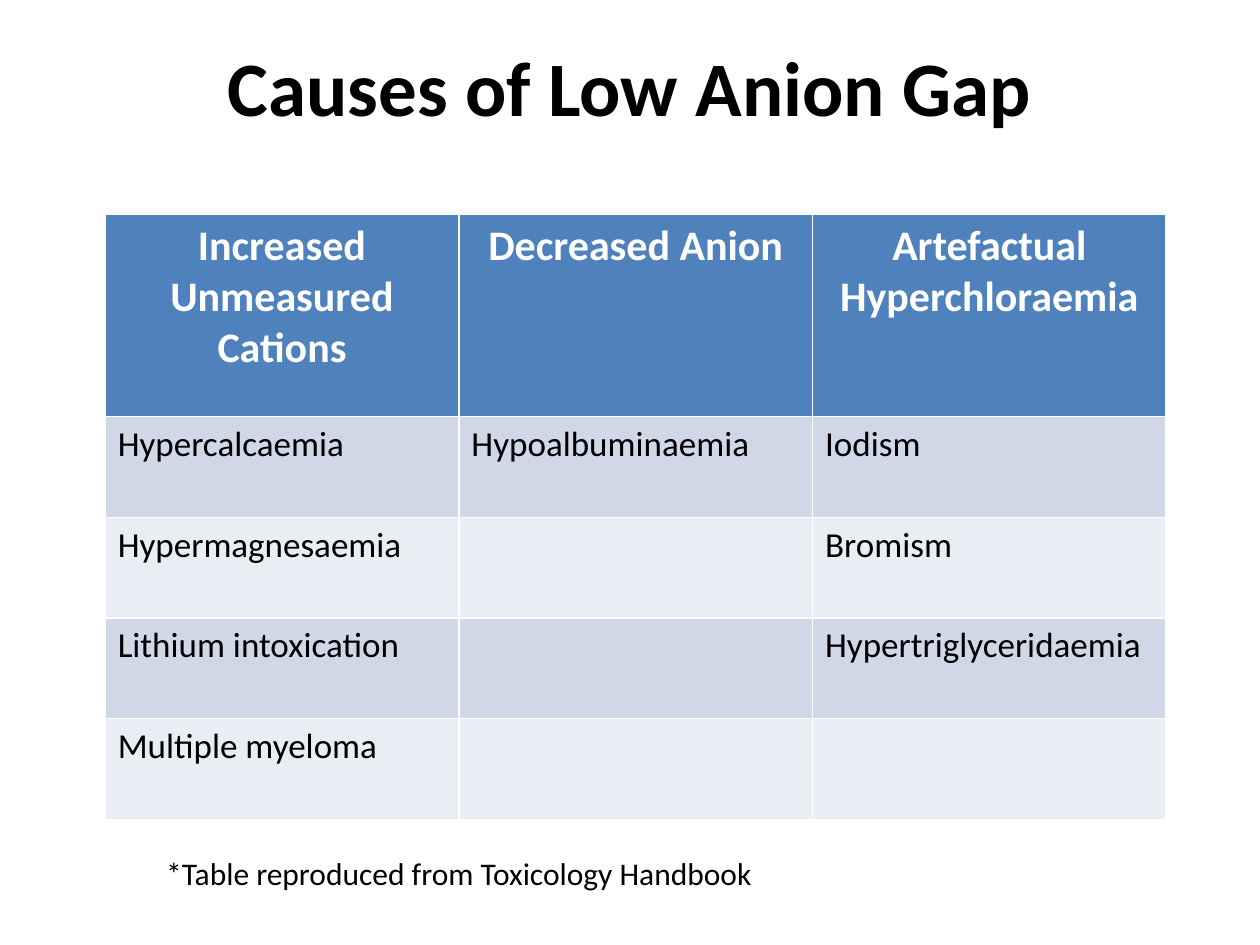
from dataclasses import dataclass

from pptx import Presentation
from pptx.dml.color import RGBColor
from pptx.enum import text as t
from pptx.slide import Slide
from pptx.text.text import _Paragraph
from pptx.util import Cm, Pt

BLACK = RGBColor(0x00, 0x00, 0x00)
WHITE = RGBColor(0xFF, 0xFF, 0xFF)
HEADER_BLUE = RGBColor(0x4F, 0x81, 0xBD)
BAND_FILLS = (RGBColor(0xD0, 0xD8, 0xE8), RGBColor(0xE9, 0xED, 0xF4))
FONT = "Calibri"

HEADER_HEIGHT = Cm(4.08)
ROW_HEIGHT = Cm(2.03)
COLUMN_WIDTH = Cm(7.13)


@dataclass(frozen=True)
class CauseGroup:
    heading: str
    causes: tuple[str, ...]


GROUPS = (
    CauseGroup(
        "Increased Unmeasured Cations",
        ("Hypercalcaemia", "Hypermagnesaemia", "Lithium intoxication", "Multiple myeloma"),
    ),
    CauseGroup("Decreased Anion", ("Hypoalbuminaemia",)),
    CauseGroup(
        "Artefactual Hyperchloraemia",
        ("Iodism", "Bromism", "Hypertriglyceridaemia"),
    ),
)


def add_run(paragraph: _Paragraph, wording: str, size: int,
            color: RGBColor = BLACK, bold: bool = False) -> None:
    run = paragraph.add_run()
    run.text = wording
    run.font.name = FONT
    run.font.size = Pt(size)
    run.font.bold = bold
    run.font.color.rgb = color


def add_title(slide: Slide) -> None:
    title = slide.shapes.title
    title.left, title.top, title.width, title.height = Cm(1.27), Cm(0.13), Cm(22.86), Cm(3.18)
    title.text_frame.vertical_anchor = t.MSO_ANCHOR.MIDDLE
    heading = title.text_frame.paragraphs[0]
    heading.alignment = t.PP_ALIGN.CENTER
    add_run(heading, "Causes of Low Anion Gap", 44, bold=True)


def add_causes_table(slide: Slide, groups: tuple[CauseGroup, ...]) -> None:
    """One column per group; the default table style supplies the white borders."""
    cause_rows = max(len(group.causes) for group in groups)
    table = slide.shapes.add_table(
        cause_rows + 1, len(groups), Cm(2.12), Cm(4.32),
        COLUMN_WIDTH * len(groups), HEADER_HEIGHT + ROW_HEIGHT * cause_rows,
    ).table
    for row_index, row in enumerate(table.rows):
        row.height = ROW_HEIGHT if row_index else HEADER_HEIGHT

    for column, group in enumerate(groups):
        table.columns[column].width = COLUMN_WIDTH
        header = table.cell(0, column)
        header.fill.solid()
        header.fill.fore_color.rgb = HEADER_BLUE
        heading = header.text_frame.paragraphs[0]
        heading.alignment = t.PP_ALIGN.CENTER
        add_run(heading, group.heading, 24, WHITE, bold=True)

        for index in range(cause_rows):
            cell = table.cell(index + 1, column)
            cell.fill.solid()
            cell.fill.fore_color.rgb = BAND_FILLS[index % 2]
            if index < len(group.causes):
                add_run(cell.text_frame.paragraphs[0], group.causes[index], 20)


def add_footnote(slide: Slide) -> None:
    frame = slide.shapes.add_textbox(Cm(3.1), Cm(17.09), Cm(12.47), Cm(1.03)).text_frame
    frame.word_wrap = False
    frame.auto_size = t.MSO_AUTO_SIZE.SHAPE_TO_FIT_TEXT
    add_run(frame.paragraphs[0], "*Table reproduced from Toxicology Handbook", 18)


def main() -> None:
    deck = Presentation()
    deck.slide_width, deck.slide_height = Cm(25.4), Cm(19.05)
    slide = deck.slides.add_slide(deck.slide_layouts.get_by_name("Title Only"))
    add_title(slide)
    add_causes_table(slide, GROUPS)
    add_footnote(slide)
    deck.save("out.pptx")


if __name__ == "__main__":
    main()
